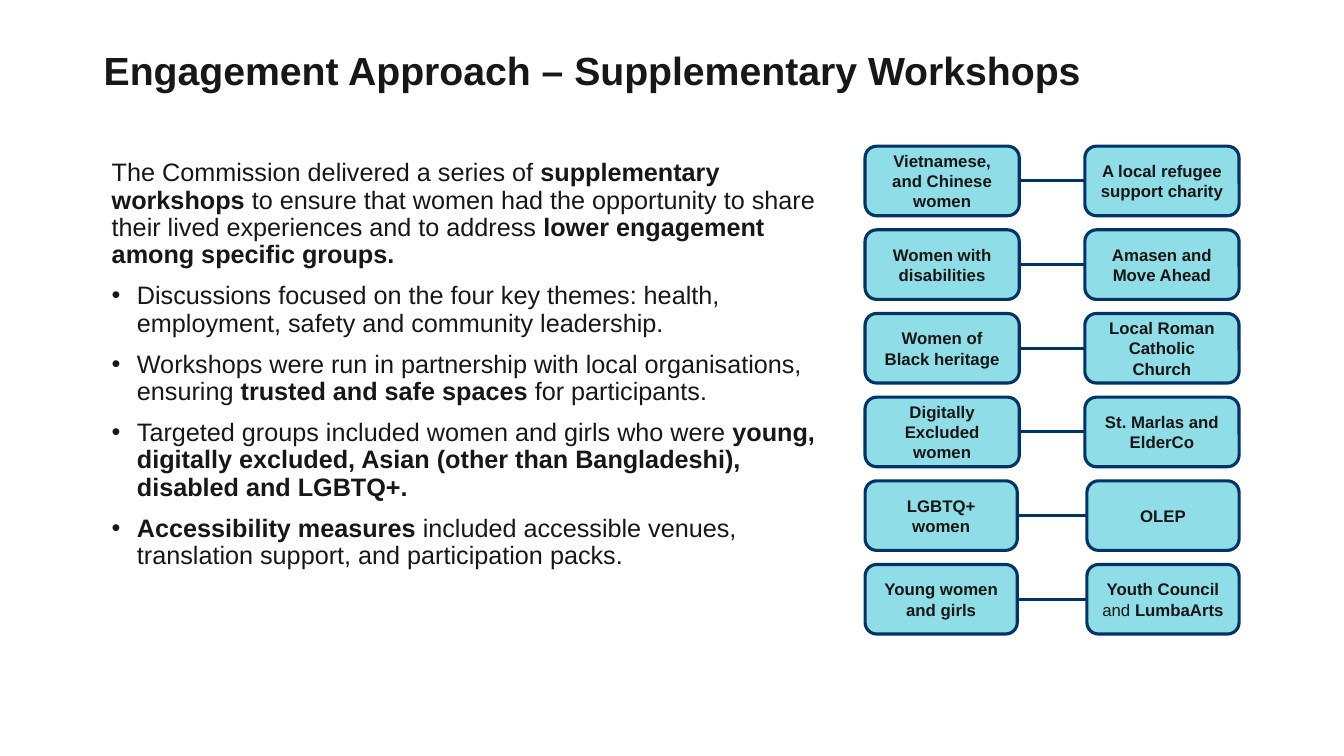
from lxml import etree
from pptx import Presentation
from pptx.dml.color import RGBColor
from pptx.enum.shapes import MSO_CONNECTOR, MSO_SHAPE
from pptx.enum.text import MSO_ANCHOR, PP_ALIGN
from pptx.oxml.ns import qn
from pptx.util import Inches, Pt

ROUNDED = MSO_SHAPE.ROUNDED_RECTANGLE
STRAIGHT = MSO_CONNECTOR.STRAIGHT
MIDDLE, TOP = MSO_ANCHOR.MIDDLE, MSO_ANCHOR.TOP
CENTER = PP_ALIGN.CENTER
RIGHT_SIDE, LEFT_SIDE = 3, 1

COLORS = {"text": "181717", "box": "8FDDE6", "line": "003366"}

TITLE = "Engagement Approach – Supplementary Workshops"
INTRO = [("The Commission delivered a series of ", False),
         ("supplementary workshops ", True),
         ("to ensure that women had the opportunity to share their lived "
          "experiences and to address ", False),
         ("lower engagement among specific groups.", True)]
BULLETS = [
    [("Discussions focused on the four key themes: health, employment, "
      "safety and community leadership.", False)],
    [("Workshops were run in partnership with local organisations, ensuring ", False),
     ("trusted and safe spaces ", True),
     ("for participants.", False)],
    [("Targeted groups included women and girls who were ", False),
     ("young, digitally excluded, Asian (other than Bangladeshi), "
      "disabled and LGBTQ+.", True)],
    [("Accessibility measures ", True),
     ("included accessible venues, translation support, and participation packs.", False)],
]
WORKSHOPS = [
    ("Vietnamese, and Chinese women", [("A local refugee support charity", True)]),
    ("Women with disabilities", [("Amasen and Move Ahead", True)]),
    ("Women of Black heritage", [("Local Roman Catholic Church", True)]),
    ("Digitally Excluded women", [("St. Marlas and ElderCo", True)]),
    ("LGBTQ+ women", [("OLEP", True)]),
    ("Young women and girls",
     [("Youth Council ", True), ("and ", False), ("LumbaArts", True)]),
]
GROUP_LEFT, PARTNER_RIGHT = 8.58, 12.29
ROWS_TOP, ROW_PITCH, BOX_HEIGHT = 1.45, 0.83, 0.69


class Deck:
    """Holds the slide style and adds elements to the current slide."""

    def __init__(self, prs):
        self.font = "Arial"
        self.line_width = Pt(2.25)
        self.s = prs.slides.add_slide(prs.slide_layouts[6])

    def color(self, name):
        return RGBColor.from_string(COLORS[name])

    def outline(self, line):
        line.color.rgb = self.color("line")
        line.width = self.line_width

    def runs(self, p, parts, size):
        for text, bold in parts:
            r = p.add_run()
            r.text = text
            r.font.name = self.font
            r.font.size = Pt(size)
            r.font.bold = bold
            r.font.color.rgb = self.color("text")

    def bullet(self, p):
        pPr = p._p.get_or_add_pPr()
        pPr.set("marL", str(Inches(0.25)))
        pPr.set("indent", str(Inches(-0.25)))
        etree.SubElement(pPr, qn("a:buFont")).set("typeface", self.font)
        etree.SubElement(pPr, qn("a:buChar")).set("char", "•")

    def text(self, x, y, w, h, paragraphs, size, anchor=TOP, space=0):
        sp = self.s.shapes.add_textbox(Inches(x), Inches(y), Inches(w), Inches(h))
        tf = sp.text_frame
        tf.word_wrap = True
        tf.vertical_anchor = anchor
        for i, (parts, bulleted) in enumerate(paragraphs):
            p = tf.add_paragraph() if i else tf.paragraphs[0]
            p.line_spacing = 0.9
            p.space_before = Pt(space)
            if bulleted:
                self.bullet(p)
            self.runs(p, parts, size)

    def box(self, x, y, w, h, parts):
        sp = self.s.shapes.add_shape(ROUNDED, Inches(x), Inches(y), Inches(w), Inches(h))
        sp.shadow.inherit = False
        sp.fill.solid()
        sp.fill.fore_color.rgb = self.color("box")
        self.outline(sp.line)
        tf = sp.text_frame
        tf.word_wrap = True
        tf.vertical_anchor = MIDDLE
        p = tf.paragraphs[0]
        p.alignment = CENTER
        self.runs(p, parts, 12)
        return sp

    def link(self, start, end):
        cx = self.s.shapes.add_connector(STRAIGHT, 0, 0, 0, 0)
        cx.begin_connect(start, RIGHT_SIDE)
        cx.end_connect(end, LEFT_SIDE)
        self.outline(cx.line)
        etree.SubElement(cx._element.spPr, qn("a:effectLst"))


def main():
    prs = Presentation()
    prs.slide_width, prs.slide_height = Inches(13.33), Inches(7.5)
    deck = Deck(prs)
    deck.text(0.93, 0, 10.69, 1.45, [([(TITLE, True)], False)], 28, anchor=MIDDLE)
    body = [(INTRO, False)] + [(parts, True) for parts in BULLETS]
    deck.text(1.01, 1.54, 7.18, 4.37, body, 18, space=10)
    for i, (group, partner) in enumerate(WORKSHOPS):
        y = ROWS_TOP + i * ROW_PITCH
        w = 1.53 if i < 4 else 1.51
        left = deck.box(GROUP_LEFT, y, w, BOX_HEIGHT, [(group, True)])
        right = deck.box(PARTNER_RIGHT - w, y, w, BOX_HEIGHT, partner)
        deck.link(left, right)
    prs.save("out.pptx")


if __name__ == "__main__":
    main()
